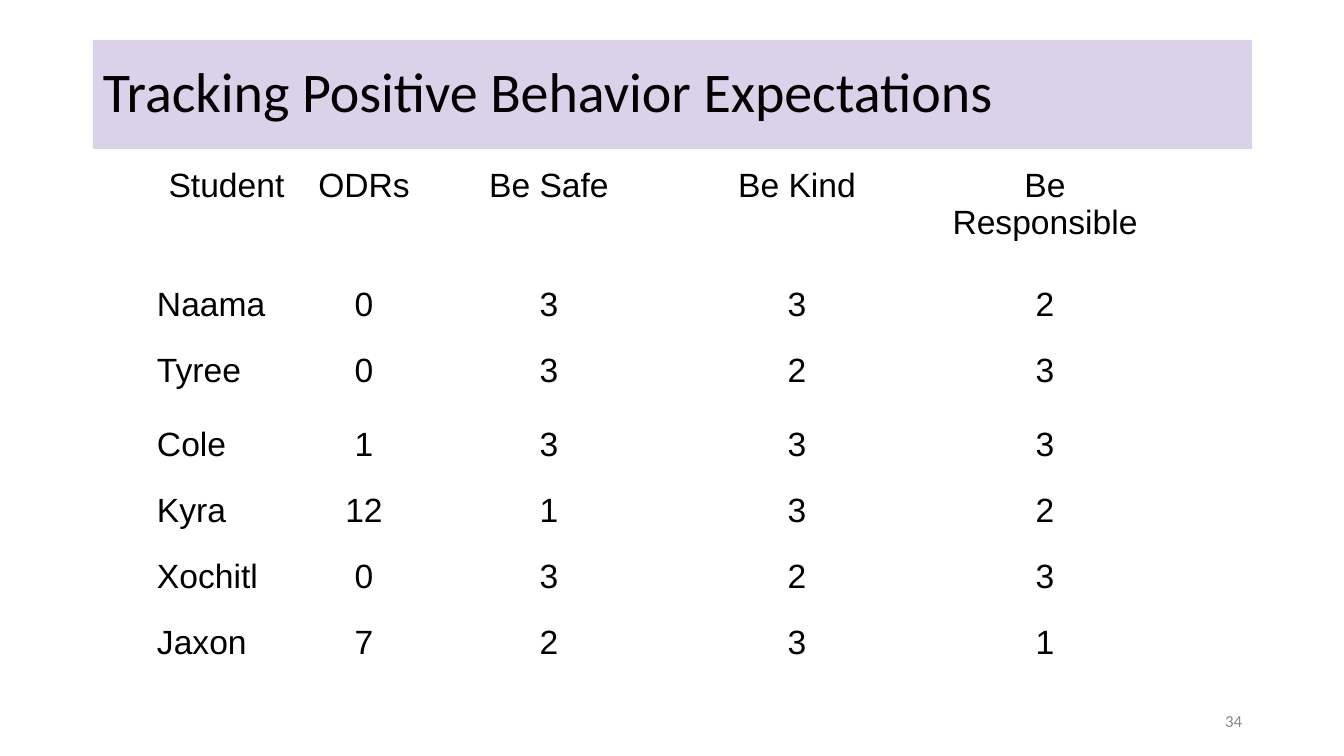
from pptx import Presentation
from pptx.dml.color import RGBColor
from pptx.enum.shapes import MSO_SHAPE as SHAPE
from pptx.enum.text import MSO_ANCHOR as ANCHOR, PP_ALIGN as ALIGN

EMU_PER_PX = 9071.43
PT = 12700
ROWS = [
    ("Student", "ODRs", "Be Safe", "Be Kind", "Be Responsible"),
    ("Naama", "0", "3", "3", "2"),
    ("Tyree", "0", "3", "2", "3"),
    ("Cole", "1", "3", "3", "3"),
    ("Kyra", "12", "1", "3", "2"),
    ("Xochitl", "0", "3", "2", "3"),
    ("Jaxon", "7", "2", "3", "1"),
]
COL_WIDTHS = [153, 122, 248, 248, 248]
ROW_HEIGHTS = [119, 66, 74, 66, 66, 66, 66]


def px(n):
    return round(n * EMU_PER_PX)


def rgb(value):
    return RGBColor.from_string(value)


def write(tf, text, size, font, color, align):
    tf.word_wrap = True
    p = tf.paragraphs[0]
    p.text = text
    p.alignment = align
    r = p.runs[0]
    r.font.size = size * PT
    r.font.name = font
    r.font.bold = False
    r.font.color.rgb = rgb(color)
    return p


def title_band(slide, x, y, w, h):
    sp = slide.shapes.add_shape(SHAPE.RECTANGLE, px(x), px(y), px(w), px(h))
    sp.shadow.inherit = False
    sp.fill.solid()
    sp.fill.fore_color.rgb = rgb("D9D2E9")
    sp.line.fill.background()
    tf = sp.text_frame
    tf.vertical_anchor = ANCHOR.MIDDLE
    p = write(tf, "Tracking Positive Behavior Expectations", 40, "Calibri",
              "000000", ALIGN.LEFT)
    p.line_spacing = 0.9


def behavior_table(slide, x, y):
    table = slide.shapes.add_table(
        len(ROWS), len(COL_WIDTHS), px(x), px(y),
        px(sum(COL_WIDTHS)), px(sum(ROW_HEIGHTS))).table
    table.first_row = table.horz_banding = False
    for column, width in zip(table.columns, COL_WIDTHS):
        column.width = px(width)
    for i, (row, height) in enumerate(zip(table.rows, ROW_HEIGHTS)):
        row.height = px(height)
        for j, cell in enumerate(row.cells):
            cell.fill.background()
            cell.margin_left = cell.margin_right = px(7)
            cell.margin_top = cell.margin_bottom = px(5)
            # Student names are left-aligned, everything else is centred
            align = ALIGN.LEFT if i and j == 0 else ALIGN.CENTER
            write(cell.text_frame, ROWS[i][j], 24, "Arial", "000000", align)


def page_number(slide, x, y, w, h):
    tf = slide.shapes.add_textbox(px(x), px(y), px(w), px(h)).text_frame
    tf.vertical_anchor = ANCHOR.MIDDLE
    write(tf, "34", 12, "Calibri", "888888", ALIGN.RIGHT)


def main():
    prs = Presentation()
    prs.slide_width, prs.slide_height = px(1344), px(756)
    slide = prs.slides.add_slide(prs.slide_layouts[6])
    title_band(slide, 93, 40, 1159, 109)
    page_number(slide, 950, 701, 302, 40)
    behavior_table(slide, 150, 162)
    prs.save("out.pptx")


if __name__ == "__main__":
    main()
